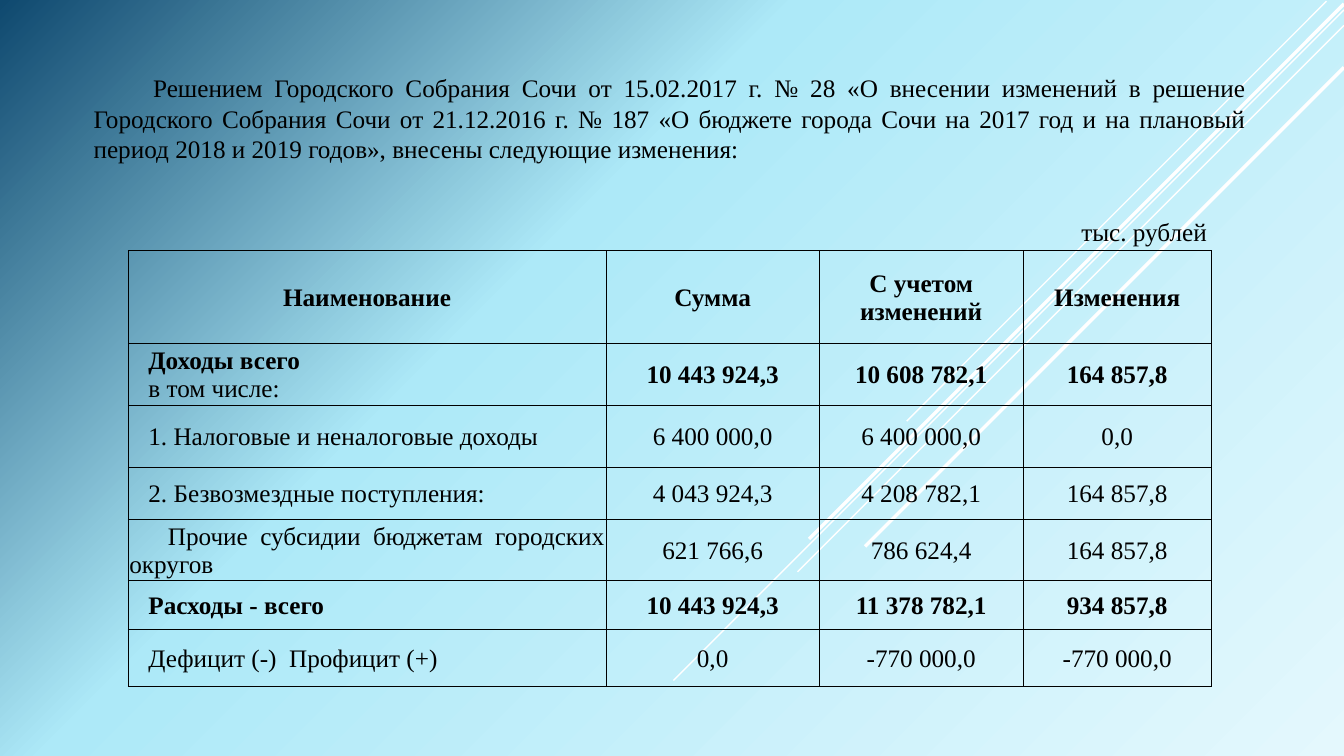
"""Build the slide on changes to the Sochi city budget for 2017."""
from dataclasses import dataclass

from lxml import etree
from pptx import Presentation
from pptx.dml.color import RGBColor
from pptx.enum.shapes import MSO_CONNECTOR
from pptx.enum.text import MSO_ANCHOR, PP_ALIGN
from pptx.oxml import parse_xml
from pptx.oxml.ns import nsdecls, qn
from pptx.util import Cm, Pt

LEFT, CENTER, JUSTIFY = PP_ALIGN.LEFT, PP_ALIGN.CENTER, PP_ALIGN.JUSTIFY
MIDDLE = MSO_ANCHOR.MIDDLE
STRAIGHT = MSO_CONNECTOR.STRAIGHT

INTRO = (
    "Решением Городского Собрания Сочи от 15.02.2017 г. № 28 «О внесении изменений "
    "в решение Городского Собрания Сочи от 21.12.2016 г. № 187 «О бюджете города Сочи "
    "на 2017 год и на плановый период 2018 и 2019 годов», внесены следующие изменения:"
)
UNITS = "тыс. рублей"
BUDGET = [
    ("Наименование", "Сумма", "С учетом изменений", "Изменения"),
    ("Доходы всего\nв том числе:", "10 443 924,3", "10 608 782,1", "164 857,8"),
    ("1. Налоговые и неналоговые доходы", "6 400 000,0", "6 400 000,0", "0,0"),
    ("2. Безвозмездные поступления:", "4 043 924,3", "4 208 782,1", "164 857,8"),
    ("Прочие субсидии бюджетам городских округов", "621 766,6", "786 624,4", "164 857,8"),
    ("Расходы - всего", "10 443 924,3", "11 378 782,1", "934 857,8"),
    ("Дефицит (-)  Профицит (+)", "0,0", "-770 000,0", "-770 000,0"),
]
BOLD_ROWS = {0, 1, 5}
SUBSIDY_ROW = 4
COL_WIDTHS = [12.04, 5.38, 5.13, 4.75]
ROW_HEIGHTS = [2.34, 1.55, 1.57, 1.3, 1.55, 1.24, 1.42]
TABLE_LEFT, TABLE_TOP = 3.23, 6.32
DIAGONALS = [
    (33.43, 0.03, 10.58, 1),
    (33.87, 0.25, 16.9, 1),
    (33.87, 0.64, 13.77, 1),
    (33.87, 0.1, 13.48, 2.5),
    (33.87, 1.7, 12.07, 2.5),
]


@dataclass(frozen=True)
class Theme:
    """Colours and type of the slide."""
    font: str = "Times New Roman"
    size: float = 18
    text_spacing: float = 21.8
    cell_spacing: float = 20
    ink: str = "000000"
    ray: str = "FFFFFF"
    border: float = 0.5
    gradient: tuple = ((0, "E4F8FD"), (62, "ADE9F8"), (100, "0F496F"))


THEME = Theme()


def set_background(s):
    stops = "".join(
        f'<a:gs pos="{pos * 1000}"><a:srgbClr val="{color}"/></a:gs>'
        for pos, color in THEME.gradient
    )
    bg = parse_xml(
        f'<p:bg {nsdecls("p", "a")}><p:bgPr><a:gradFill rotWithShape="1">'
        f'<a:gsLst>{stops}</a:gsLst><a:path path="circle">'
        '<a:fillToRect l="100000" t="100000"/></a:path></a:gradFill>'
        '<a:effectLst/></p:bgPr></p:bg>'
    )
    s.element.cSld.insert(0, bg)


def add_diagonal(s, x, y, run, width):
    line = s.shapes.add_connector(STRAIGHT, Cm(x), Cm(y), Cm(x - run), Cm(y + run))
    line.line.color.rgb = RGBColor.from_string(THEME.ray)
    line.line.width = Pt(width)
    etree.SubElement(line._element.spPr, qn("a:effectLst"))


def style_paragraph(p, align, spacing, bold=False, margin=0, indent=0):
    p.alignment = align
    p.line_spacing = Pt(spacing)
    pPr = p._p.get_or_add_pPr()
    pPr.set("marL", str(Cm(margin)))
    pPr.set("indent", str(Cm(indent)))
    for r in p.runs:
        r.font.name = THEME.font
        r.font.size = Pt(THEME.size)
        r.font.bold = bold
        r.font.color.rgb = RGBColor.from_string(THEME.ink)


def add_text(s, text, box, align, indent=0):
    tf = s.shapes.add_textbox(*map(Cm, box)).text_frame
    tf.word_wrap = True
    tf.text = text
    style_paragraph(tf.paragraphs[0], align, THEME.text_spacing, indent=indent)


def set_borders(cell):
    tcPr = cell._tc.get_or_add_tcPr()
    for i, side in enumerate(("lnL", "lnR", "lnT", "lnB")):
        tcPr.insert(i, parse_xml(
            f'<a:{side} {nsdecls("a")} w="{Pt(THEME.border)}"><a:solidFill>'
            f'<a:srgbClr val="{THEME.ink}"/></a:solidFill></a:{side}>'
        ))


def fill_cell(cell, text, row, col):
    cell.fill.background()
    set_borders(cell)
    cell.vertical_anchor = MIDDLE
    cell.margin_left = cell.margin_right = cell.margin_top = Cm(0.03)
    cell.margin_bottom = 0
    cell.text_frame.text = text
    align, margin, indent = CENTER, 0, 0
    if col == 0 and row == SUBSIDY_ROW:
        align, indent = JUSTIFY, 0.97
    elif col == 0 and row > 0:
        align, margin = LEFT, 0.48
    for i, p in enumerate(cell.text_frame.paragraphs):
        bold = row in BOLD_ROWS and i == 0
        style_paragraph(p, align, THEME.cell_spacing, bold, margin, indent)


def add_budget_table(s):
    size = (sum(COL_WIDTHS), sum(ROW_HEIGHTS))
    table = s.shapes.add_table(
        len(BUDGET), len(COL_WIDTHS), *map(Cm, (TABLE_LEFT, TABLE_TOP, *size))
    ).table
    table.first_row = table.horz_banding = False
    for column, width in zip(table.columns, COL_WIDTHS):
        column.width = Cm(width)
    for row, (values, height) in enumerate(zip(BUDGET, ROW_HEIGHTS)):
        table.rows[row].height = Cm(height)
        for col, text in enumerate(values):
            fill_cell(table.cell(row, col), text, row, col)


def main():
    prs = Presentation()
    prs.slide_width, prs.slide_height = Cm(33.87), Cm(19.05)
    s = prs.slides.add_slide(prs.slide_layouts[6])
    set_background(s)
    for diagonal in DIAGONALS:
        add_diagonal(s, *diagonal)
    add_text(s, UNITS, (27, 5.31, 4.85, 1.02), LEFT)
    add_text(s, INTRO, (2.11, 1.7, 29.54, 2.57), JUSTIFY, indent=1.5)
    add_budget_table(s)
    prs.save("out.pptx")


if __name__ == "__main__":
    main()
